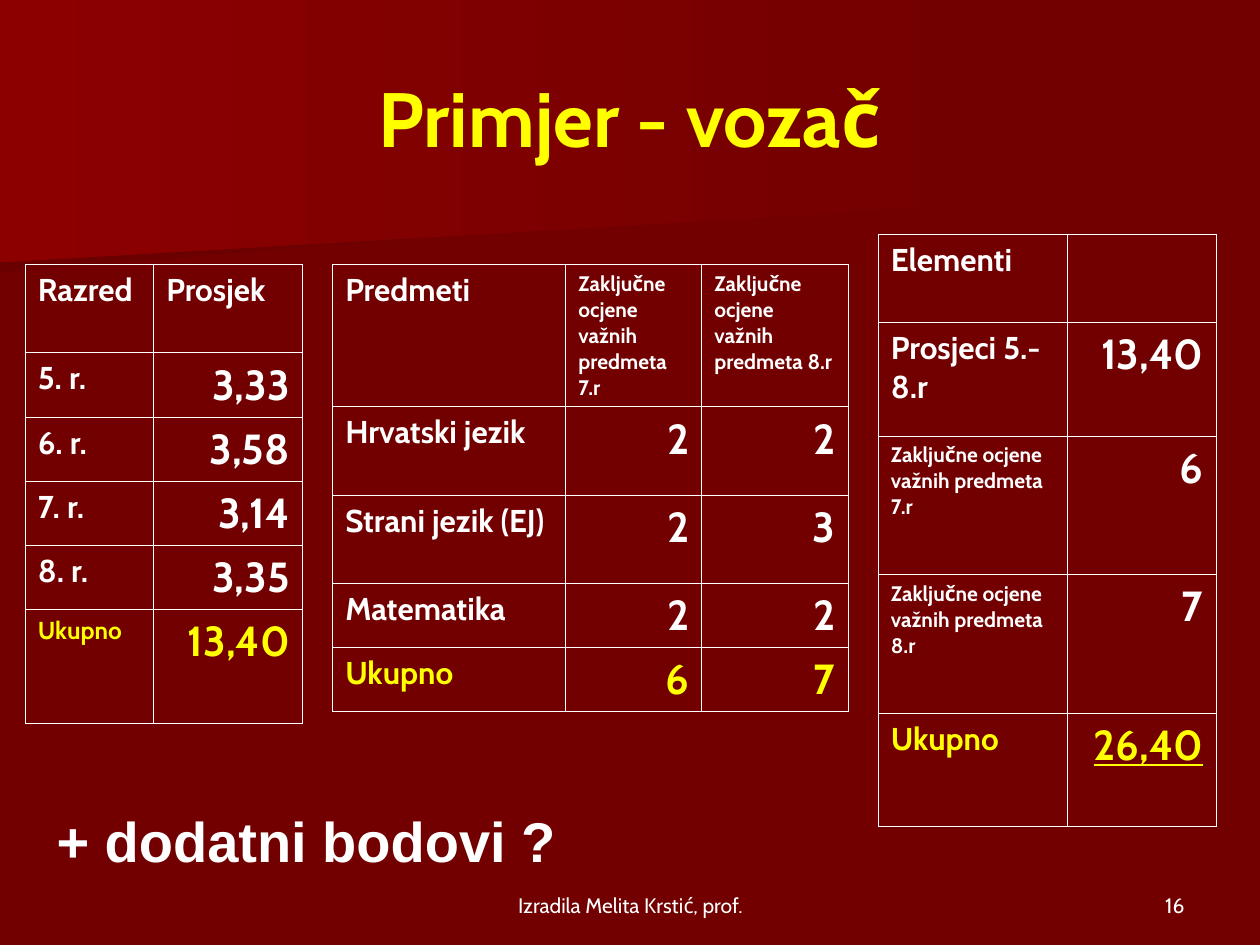
from lxml import etree
from pptx import Presentation
from pptx import util as u
from pptx.dml import color
from pptx.enum import text
from pptx.oxml import ns

COLORS = {
    "ground": "720000", "glow": "8C0000", "shade": "6B0000",
    "body": "FFFFFF", "accent": "FFFF00",
}
LEFT, CENTER, RIGHT = text.PP_ALIGN.LEFT, text.PP_ALIGN.CENTER, text.PP_ALIGN.RIGHT
TOP, MIDDLE, BOTTOM = text.MSO_ANCHOR.TOP, text.MSO_ANCHOR.MIDDLE, text.MSO_ANCHOR.BOTTOM
LABEL, SMALL, FIGURE = 18, 12, 24

# Background planes: outline in hundredths of an inch, colour at the left end
planes = [
    ([(778, 153), (0, 216), (0, 101), (779, 101), (778, 128)], "shade"),
    ([(791, 162), (0, 208), (0, 0), (792, 0)], "glow"),
]

# Text lines: words, box in inches, alignment, anchor, font format
lines = [
    ("Primjer - vozač", (0.5, 0.3, 9, 1.25), CENTER, MIDDLE,
     {"name": "Cabin", "size": 44, "color": "accent", "bold": True}),
    ("16", (7.17, 6.83, 2.33, 0.5), RIGHT, BOTTOM,
     {"name": "Cabin", "size": 12, "color": "body"}),
    ("Izradila Melita Krstić, prof.", (3.42, 6.83, 3.17, 0.5), CENTER, BOTTOM,
     {"name": "Cabin", "size": 12, "color": "body"}),
    ("+ dodatni bodovi ?", (0.35, 6.35, 5.35, 0.64), LEFT, TOP,
     {"name": "Arial", "size": 32, "color": "body", "bold": True}),
]

# Tables: the first row is the heading, the last one the total
grade_7 = "Zaključne ocjene važnih predmeta 7.r"
grade_8 = "Zaključne ocjene važnih predmeta 8.r"
tables = [
    {"at": (0.2, 2.1), "cols": [1.02, 1.18], "rows": [0.7, 0.5, 0.5, 0.5, 0.5, 0.9],
     "total_size": 14,
     "cells": [("Razred", "Prosjek"), ("5. r.", "3,33"), ("6. r.", "3,58"),
               ("7. r.", "3,14"), ("8. r.", "3,35"), ("Ukupno", "13,40")]},
    {"at": (2.64, 2.1), "cols": [1.85, 1.08, 1.16], "rows": [1.1, 0.7, 0.7, 0.5, 0.5],
     "cells": [("Predmeti", grade_7, grade_8), ("Hrvatski jezik", "2", "2"),
               ("Strani jezik (EJ)", "2", "3"), ("Matematika", "2", "2"),
               ("Ukupno", "6", "7")]},
    {"at": (6.97, 1.86), "cols": [1.5, 1.18], "rows": [0.7, 0.9, 1.1, 1.1, 0.9],
     "underlined": "26,40",
     "cells": [("Elementi", ""), ("Prosjeci 5.-8.r", "13,40"), (grade_7, "6"),
               (grade_8, "7"), ("Ukupno", "26,40")]},
]


def rgb(key):
    return color.RGBColor.from_string(COLORS[key])


def set_font(font, values):
    for key, value in values.items():
        if key == "color":
            font.color.rgb = rgb(value)
        else:
            setattr(font, key, u.Pt(value) if key == "size" else value)


def add_plane(slide, outline, left_color):
    builder = slide.shapes.build_freeform(*outline[0], scale=u.Inches(0.01))
    builder.add_line_segments(outline[1:], close=True)
    plane = builder.convert_to_shape()
    plane.shadow.inherit = False
    plane.line.fill.background()
    plane.fill.gradient()
    plane.fill.gradient_angle = 180
    for stop, key in zip(plane.fill.gradient_stops, ("ground", left_color)):
        stop.color.rgb = rgb(key)
    for stop, position in zip(plane.fill.gradient_stops, (0, 1)):
        stop.position = position


def add_line(slide, words, box, align, anchor, font):
    frame = slide.shapes.add_textbox(*map(u.Inches, box)).text_frame
    frame.word_wrap = True
    frame.vertical_anchor = anchor
    paragraph = frame.paragraphs[0]
    paragraph.alignment = align
    run = paragraph.add_run()
    run.text = words
    set_font(run.font, font)


def add_borders(cell):
    properties = cell._tc.get_or_add_tcPr()
    for index, side in enumerate(("lnL", "lnR", "lnT", "lnB")):
        border = etree.Element(ns.qn("a:" + side), w=str(u.Pt(0.45)))
        fill = etree.SubElement(border, ns.qn("a:solidFill"))
        etree.SubElement(fill, ns.qn("a:srgbClr"), val=COLORS["body"])
        properties.insert(index, border)


def fill_cell(cell, words, row, col, table):
    total = row == len(table["rows"]) - 1
    figure = row > 0 and col > 0
    size = FIGURE if figure else SMALL if words in (grade_7, grade_8) else LABEL
    if total and not figure:
        size = table.get("total_size", LABEL)
    cell.fill.background()
    add_borders(cell)
    paragraph = cell.text_frame.paragraphs[0]
    paragraph.alignment = RIGHT if figure else LEFT
    paragraph.line_spacing = 1.01
    set_font(paragraph.font, {"size": size})
    if words:
        run = paragraph.add_run()
        run.text = words
        set_font(run.font, {"name": "Cabin", "size": size, "bold": True,
                            "color": "accent" if total else "body"})
        if words == table.get("underlined"):
            run.font.underline = True


def add_grid(slide, table):
    cols, rows = table["cols"], table["rows"]
    box = (*table["at"], sum(cols), sum(rows))
    grid = slide.shapes.add_table(len(rows), len(cols), *map(u.Inches, box)).table
    grid.first_row = grid.horz_banding = False
    for column, width in zip(grid.columns, cols):
        column.width = u.Inches(width)
    for line, height in zip(grid.rows, rows):
        line.height = u.Inches(height)
    for row, entries in enumerate(table["cells"]):
        for col, words in enumerate(entries):
            fill_cell(grid.cell(row, col), words, row, col, table)


def main():
    deck = Presentation()
    deck.slide_width, deck.slide_height = u.Inches(10), u.Inches(7.5)
    slide = deck.slides.add_slide(deck.slide_layouts[6])
    slide.background.fill.solid()
    slide.background.fill.fore_color.rgb = rgb("ground")
    for plane in planes:
        add_plane(slide, *plane)
    for table in tables:
        add_grid(slide, table)
    for line in lines:
        add_line(slide, *line)
    deck.save("out.pptx")


if __name__ == "__main__":
    main()
